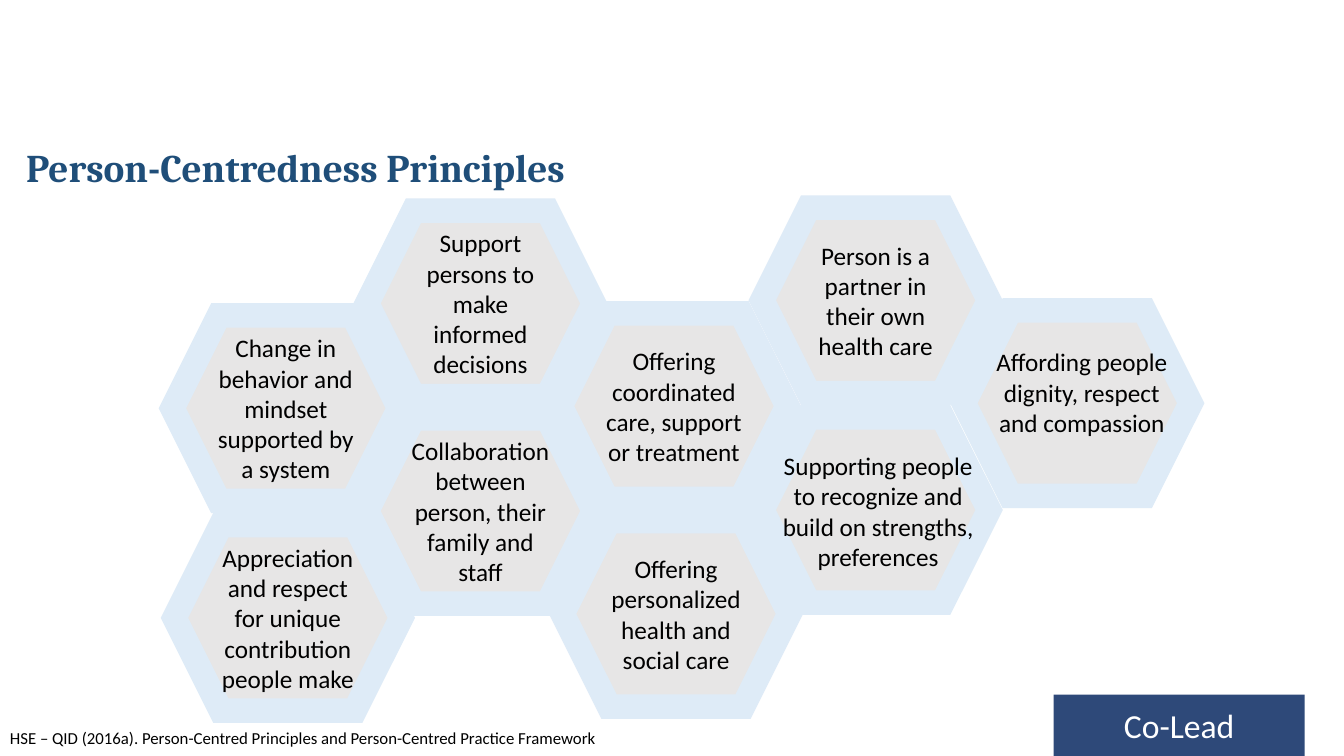
import pptx
import pptx.util
import pptx.dml.color
import pptx.enum.shapes
import pptx.enum.text
import lxml.etree
from pptx.util import Inches, Pt

HUES = {"navy": "2E4979", "blue": "1F4E79", "pale": "DEEBF7",
        "grey": "E7E6E6", "black": "000000", "white": "FFFFFF"}
TITLE = "Person-Centredness Principles"
SOURCE = ("HSE – QID (2016a). Person-Centred Principles and "
          "Person-Centred Practice Framework")
CELLS = [
    (1.73, 5.21, "Appreciation and respect for unique contribution people make"),
    (3.64, 4.15, "Collaboration between person, their family and staff"),
    (5.58, 5.17, "Offering personalized health and social care"),
    (5.56, 3.11, "Offering coordinated care, support or treatment"),
    (1.71, 3.13, "Change in behavior and mindset supported by a system"),
    (3.64, 2.09, "Support persons to make informed decisions"),
    (7.56, 4.14, ""),
    (7.56, 2.06, "Person is a partner in their own health care"),
    (9.56, 3.08, ""),
]
LABELS = [
    (9.78, 3.39, 1.9, "Affording people dignity, respect and compassion"),
    (7.64, 4.42, 2.14,
     "Supporting people to recognize and build on strengths, preferences"),
]
WIDE, HIGH, RIM = 2.25, 1.84, 17.5

KIND = pptx.enum.shapes.MSO_SHAPE
ALIGN = pptx.enum.text.PP_ALIGN
ANCHOR = pptx.enum.text.MSO_ANCHOR


def tint(name):
    return pptx.dml.color.RGBColor.from_string(HUES[name])


def write(shape, text, size=18, font="Calibri", hue="black", bold=False,
          align=ALIGN.CENTER, anchor=ANCHOR.MIDDLE):
    frame = shape.text_frame
    frame.word_wrap = True
    frame.auto_size = pptx.enum.text.MSO_AUTO_SIZE.NONE
    frame.vertical_anchor = anchor
    frame.text = text
    para = frame.paragraphs[0]
    para.alignment = align
    para.font.size = Pt(size)
    para.font.name = font
    para.font.bold = bold
    para.font.color.rgb = tint(hue)
    return frame


def draw(slide, kind, box, fill):
    shape = slide.shapes.add_shape(kind, *map(Inches, box))
    shape.shadow.inherit = False
    shape.fill.solid()
    shape.fill.fore_color.rgb = tint(fill)
    shape.line.fill.background()
    return shape


def rim(shape):
    shape.line.color.rgb = tint("pale")
    shape.line.width = Pt(RIM)
    line = shape.line._get_or_add_ln()
    join = lxml.etree.SubElement(line, pptx.oxml.ns.qn("a:miter"))
    join.set("lim", "800000")


def main():
    deck = pptx.Presentation()
    deck.slide_width, deck.slide_height = Inches(13.33), Inches(7.5)
    slide = deck.slides.add_slide(deck.slide_layouts[5])

    badge = draw(slide, KIND.RECTANGLE, (10.45, 6.89, 2.49, 0.61), "navy")
    write(badge, "Co-Lead", size=24, hue="white")

    title = slide.shapes.title
    title.left, title.top = Inches(0.19), Inches(0.95)
    title.width, title.height = Inches(12.07), Inches(1.47)
    frame = write(title, TITLE, size=28, font="Cambria", hue="blue",
                  bold=True, align=ALIGN.LEFT)
    frame.margin_left = frame.margin_right = Inches(0.07)
    frame.margin_top = frame.margin_bottom = Inches(0.04)
    frame.paragraphs[0].line_spacing = 0.9

    for left, top, text in CELLS:
        cell = draw(slide, KIND.HEXAGON, (left, top, WIDE, HIGH), "grey")
        rim(cell)
        if text:
            write(cell, text)

    for left, top, wide, text in LABELS:
        box = slide.shapes.add_textbox(*map(Inches, (left, top, wide, 1.33)))
        write(box, text, anchor=ANCHOR.TOP)

    note = slide.shapes.add_textbox(*map(Inches, (0, 7.17, 10.51, 0.3)))
    write(note, SOURCE, size=12, align=ALIGN.LEFT, anchor=ANCHOR.TOP)

    deck.save("out.pptx")


if __name__ == "__main__":
    main()
